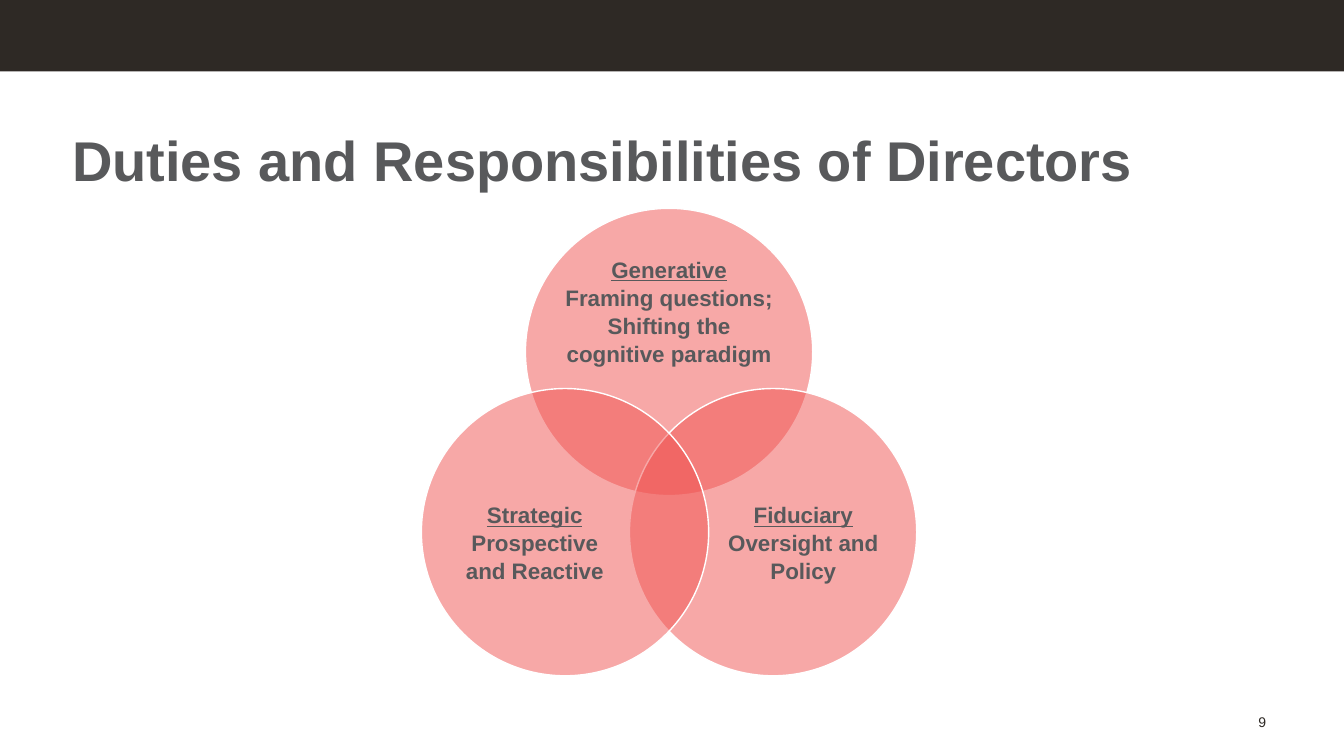
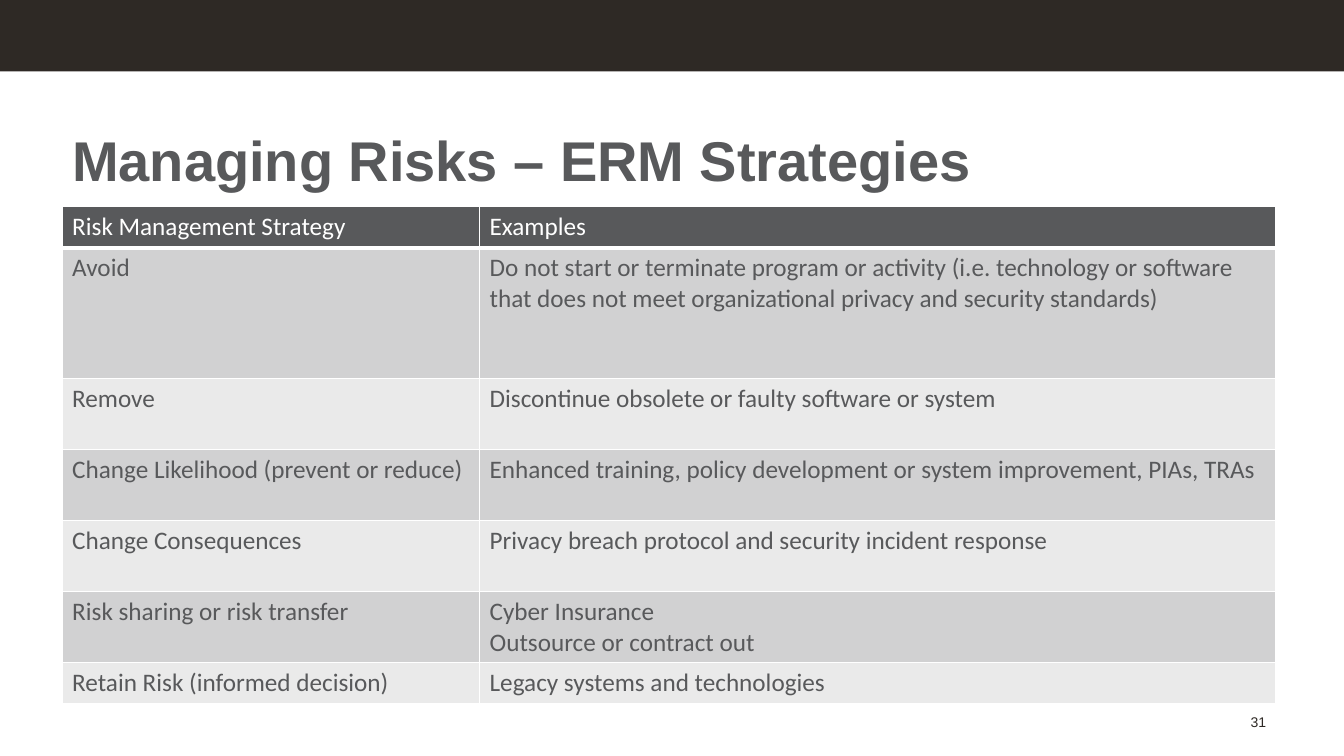
from math import cos, radians, sin

from lxml.etree import SubElement
from pptx import Presentation
from pptx.dml.color import RGBColor
from pptx.enum.shapes import MSO_SHAPE
from pptx.enum.text import MSO_ANCHOR, MSO_AUTO_SIZE, PP_ALIGN
from pptx.oxml.ns import qn
from pptx.util import Emu, Pt

COLUMNS, ROWS, CELL = 160, 90, 76200
LEFT, WIDTH = 7.4, 144.5
COLORS = {
    "band": "2E2925",
    "text": "58595B",
    "circle": "F05351",
    "white": "FFFFFF",
    "odd": "D1D1D2",
    "even": "EAEAEA",
}

DUTIES = [
    (-90, ["Generative", "Framing questions; Shifting the cognitive paradigm"],
     (0, -4.9), (25.1, 12.8)),
    (30, ["Fiduciary", "Oversight and Policy"], (3.6, 1.2), (20.5, 18.8)),
    (150, ["Strategic", "Prospective and Reactive"], (-3.6, 1.2), (20.5, 18.8)),
]
STRATEGIES = [
    ("Risk Management Strategy", "Examples"),
    ("Avoid", "Do not start or terminate program or activity (i.e. technology or "
              "software that does not meet organizational privacy and security standards)"),
    ("Remove", "Discontinue obsolete or faulty software or system"),
    ("Change Likelihood (prevent or reduce)",
     "Enhanced training, policy development or system improvement, PIAs, TRAs"),
    ("Change Consequences", "Privacy breach protocol and security incident response"),
    ("Risk sharing or risk transfer", "Cyber Insurance\nOutsource or contract out"),
    ("Retain Risk (informed decision)", "Legacy systems and technologies"),
]


def grid(*cells):
    return [Emu(round(cell * CELL)) for cell in cells]


def color(name):
    return RGBColor.from_string(COLORS[name])


def write(frame, lines, size=16, font="Arial", ink="text", bold=False,
          align=PP_ALIGN.LEFT, spacing=None, heading_underlined=False):
    for index, line in enumerate(lines):
        paragraph = frame.add_paragraph() if index else frame.paragraphs[0]
        paragraph.alignment = align
        paragraph.line_spacing = spacing
        run = paragraph.add_run()
        run.text = line
        run.font.name, run.font.size, run.font.bold = font, Pt(size), bold
        run.font.underline = heading_underlined and index == 0
        run.font.color.rgb = color(ink)


class Deck:
    def __init__(self):
        self.presentation = Presentation()
        self.presentation.slide_width, self.presentation.slide_height = grid(COLUMNS, ROWS)
        self.slide = None

    def start_slide(self, title, number):
        self.slide = self.presentation.slides.add_slide(self.presentation.slide_layouts[5])
        self.shape(MSO_SHAPE.RECTANGLE, (0, 0, COLUMNS, 8.5), "band")
        self.text([str(number)], (140.3, 82.7, 11.6, 4.8), MSO_ANCHOR.BOTTOM,
                  size=10, ink="band", align=PP_ALIGN.RIGHT)
        heading = self.slide.shapes.title
        heading.left, heading.top, heading.width, heading.height = grid(LEFT, 14.9, WIDTH, 9.2)
        frame = heading.text_frame
        frame.word_wrap, frame.auto_size = True, MSO_AUTO_SIZE.NONE
        frame.vertical_anchor = MSO_ANCHOR.MIDDLE
        write(frame, [title], size=40, bold=True, spacing=0.9)

    def shape(self, kind, place, fill, opacity=100, outline=None):
        shape = self.slide.shapes.add_shape(kind, *grid(*place))
        shape.shadow.inherit = False
        shape.fill.solid()
        shape.fill.fore_color.rgb = color(fill)
        if opacity < 100:
            tint = shape.fill._xPr.find(qn("a:solidFill")).find(qn("a:srgbClr"))
            SubElement(tint, qn("a:alpha")).set("val", str(opacity * 1000))
        if outline:
            shape.line.color.rgb = color(outline)
            shape.line.width = Pt(1)
        else:
            shape.line.fill.background()

    def text(self, lines, place, anchor=MSO_ANCHOR.MIDDLE, inset=None, **style):
        frame = self.slide.shapes.add_textbox(*grid(*place)).text_frame
        frame.word_wrap, frame.vertical_anchor = True, anchor
        if inset is not None:
            frame.margin_left = frame.margin_right = inset
            frame.margin_top = frame.margin_bottom = inset
        write(frame, lines, **style)

    def venn(self, duties, center, spread, diameter):
        for angle, lines, shift, (width, height) in duties:
            x = center[0] + spread * cos(radians(angle))
            y = center[1] + spread * sin(radians(angle))
            self.shape(MSO_SHAPE.OVAL,
                       (x - diameter / 2, y - diameter / 2, diameter, diameter),
                       "circle", opacity=50, outline="white")
            self.text(lines,
                      (x + shift[0] - width / 2, y + shift[1] - height / 2, width, height),
                      inset=0, bold=True, align=PP_ALIGN.CENTER, spacing=1.05,
                      heading_underlined=True)

    def borders(self, cell, bottom):
        properties = cell._tc.get_or_add_tcPr()
        for side, points in (("L", 1), ("R", 1), ("T", 1), ("B", bottom)):
            line = SubElement(properties, qn(f"a:ln{side}"), w=str(Pt(points)))
            fill = SubElement(line, qn("a:solidFill"))
            SubElement(fill, qn("a:srgbClr"), val=COLORS["white"])

    def table(self, entries, top, widths, heights):
        place = grid(LEFT, top, sum(widths), sum(heights))
        table = self.slide.shapes.add_table(len(entries), len(widths), *place).table
        for column, width in zip(table.columns, grid(*widths)):
            column.width = width
        for index, (row, height) in enumerate(zip(table.rows, grid(*heights))):
            row.height = height
            header = index == 0
            fill = "text" if header else "odd" if index % 2 else "even"
            for cell, entry in zip(row.cells, entries[index]):
                self.borders(cell, 3 if header else 1)
                cell.fill.solid()
                cell.fill.fore_color.rgb = color(fill)
                write(cell.text_frame, entry.split("\n"), size=18, font="Calibri",
                      ink="white" if header else "text")


def main():
    deck = Deck()
    deck.start_slide("Duties and Responsibilities of Directors", 9)
    deck.venn(DUTIES, center=(LEFT + WIDTH / 2, 56.2), spread=14.3, diameter=34.2)
    deck.start_slide("Managing Risks – ERM Strategies", 31)
    deck.table(STRATEGIES, 24.6, [49.7, WIDTH - 49.7], [4.9, 15.6, *[8.45] * 4, 4.9])
    deck.presentation.save("out.pptx")


if __name__ == "__main__":
    main()
